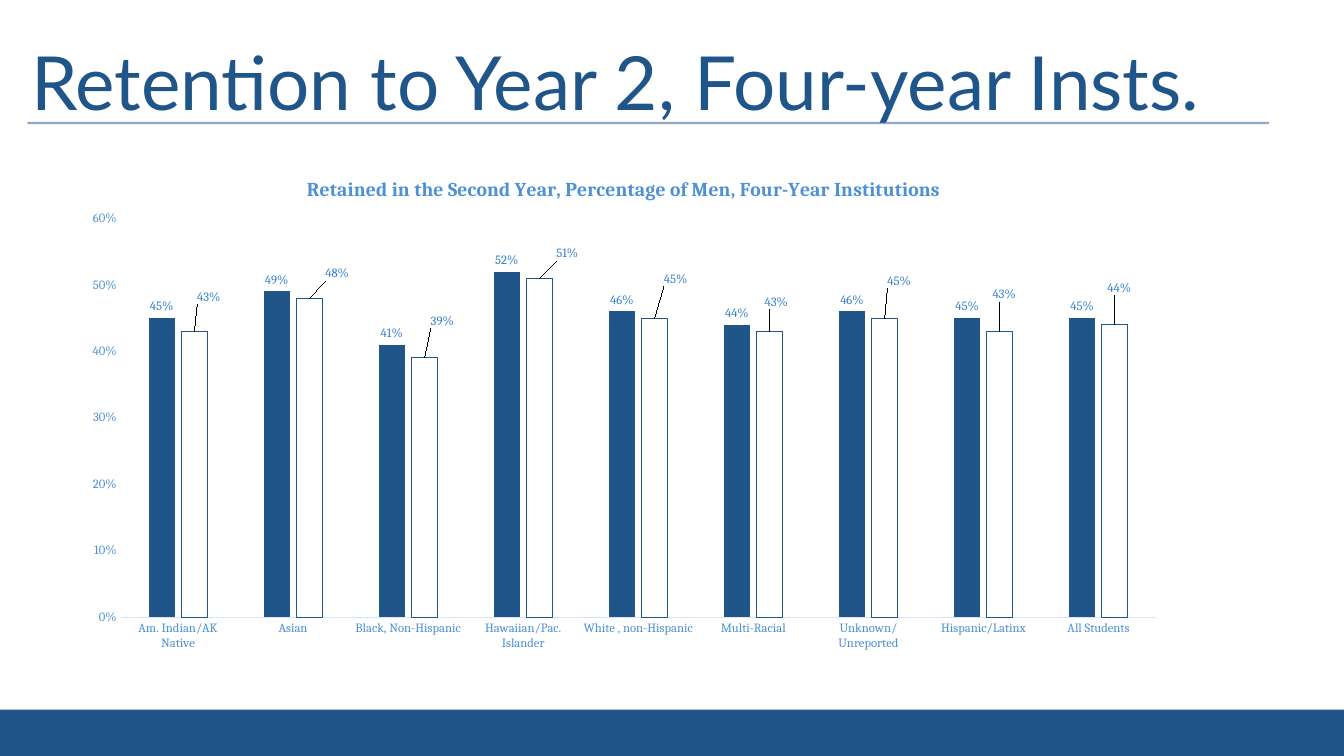
from lxml import etree
from pptx import Presentation
from pptx.chart.data import CategoryChartData
from pptx.dml.color import RGBColor
from pptx.enum import chart as ch, shapes, text
from pptx.oxml import ns
from pptx.util import Cm, Pt

HEADING = "Retention to Year 2, Four-year Insts."
CHART_TITLE = "Retained in the Second Year, Percentage of Men, Four-Year Institutions"
RETENTION = [
    ("Am. Indian/AK Native", 0.45, 0.43),
    ("Asian", 0.49, 0.48),
    ("Black, Non-Hispanic", 0.41, 0.39),
    ("Hawaiian/Pac. Islander", 0.52, 0.51),
    ("White , non-Hispanic", 0.46, 0.45),
    ("Multi-Racial", 0.44, 0.43),
    ("Unknown/ Unreported", 0.46, 0.45),
    ("Hispanic/Latinx", 0.45, 0.43),
    ("All Students", 0.45, 0.44),
]
LABEL_SHIFTS = [
    (0.013, -0.045), (0.025, -0.026), (0.016, -0.05),
    (0.025, -0.026), (0.019, -0.055), (0.006, -0.035),
    (0.013, -0.05), (0.004, -0.05), (0.004, -0.05),
]
THEME = {
    "navy": RGBColor.from_string("20558A"),
    "axis": RGBColor.from_string("4C90D5"),
    "label": RGBColor.from_string("307FCF"),
    "baseline": RGBColor.from_string("D6E5F5"),
    "heading_font": "Lato",
    "chart_font": "Cambria",
    "heading": Pt(53.3),
    "chart_title": Pt(14),
    "chart": Pt(10),
    "small": Pt(9),
}


def style(font, size, color, face="chart_font", bold=False):
    font.name = THEME[face]
    font.size = THEME[size]
    font.color.rgb = THEME[color]
    font.bold = bold


def manual_layout(**values):
    layout = etree.Element(ns.qn("c:layout"))
    manual = etree.SubElement(layout, ns.qn("c:manualLayout"))
    for tag, value in values.items():
        etree.SubElement(manual, ns.qn(f"c:{tag}")).set("val", str(value))
    return layout


def add_frame(slide, width, height):
    band_height = Cm(1.17)
    band = slide.shapes.add_shape(
        shapes.MSO_SHAPE.RECTANGLE, 0, height - band_height, width, band_height)
    band.shadow.inherit = False
    band.fill.solid()
    band.fill.fore_color.rgb = THEME["navy"]
    band.line.fill.background()

    rule = slide.shapes.add_connector(
        shapes.MSO_CONNECTOR.STRAIGHT, Cm(0.69), Cm(3.1), Cm(31.98), Cm(3.1))
    rule.line.color.rgb = THEME["navy"]
    rule.line.width = Pt(1.5)
    color = rule.line._get_or_add_ln().find(".//" + ns.qn("a:srgbClr"))
    etree.SubElement(color, ns.qn("a:alpha")).set("val", "50000")
    etree.SubElement(rule._element.spPr, ns.qn("a:effectLst"))


def add_heading(slide):
    heading = slide.shapes.title
    heading.left, heading.top = Cm(0.53), Cm(0.79)
    heading.width, heading.height = Cm(30.71), Cm(2.26)
    frame = heading.text_frame
    frame.auto_size = text.MSO_AUTO_SIZE.NONE
    frame.vertical_anchor = text.MSO_ANCHOR.TOP
    frame.paragraphs[0].alignment = text.PP_ALIGN.LEFT
    run = frame.paragraphs[0].add_run()
    run.text = HEADING
    style(run.font, "heading", "navy", "heading_font")


def add_retention_chart(slide):
    names, first, second = zip(*RETENTION)
    data = CategoryChartData(number_format="0%")
    data.categories = names
    data.add_series("Series 1", first)
    data.add_series("Series 2", second)
    chart = slide.shapes.add_chart(
        ch.XL_CHART_TYPE.COLUMN_CLUSTERED,
        Cm(1.78), Cm(3.84), Cm(27.94), Cm(12.8), data).chart
    style(chart.font, "chart", "navy")
    chart.has_legend = False

    chart.has_title = True
    run = chart.chart_title.text_frame.paragraphs[0].add_run()
    run.text = CHART_TITLE
    style(run.font, "chart_title", "axis", bold=True)
    title = chart.chart_title._element
    for old in title.findall(ns.qn("c:layout")):
        title.remove(old)
    title.find(ns.qn("c:tx")).addnext(
        manual_layout(xMode="edge", yMode="edge", x=0.21, y=0.04))

    plot_area = chart._chartSpace.find(".//" + ns.qn("c:plotArea"))
    for old in plot_area.findall(ns.qn("c:layout")):
        plot_area.remove(old)
    plot_area.insert(0, manual_layout(
        layoutTarget="inner", xMode="edge", yMode="edge",
        x=0.045, y=0.13, w=0.934, h=0.785))

    for axis in (chart.category_axis, chart.value_axis):
        axis.has_major_gridlines = False
        axis.major_tick_mark = axis.minor_tick_mark = ch.XL_TICK_MARK.NONE
        style(axis.tick_labels.font, "small", "axis")
    chart.category_axis.format.line.color.rgb = THEME["baseline"]
    chart.category_axis.format.line.width = Pt(0.75)
    scale = chart.value_axis
    scale.format.line.fill.background()
    scale.minimum_scale, scale.maximum_scale, scale.major_unit = 0, 0.6, 0.1
    scale.tick_labels.number_format = "0%"
    scale.tick_labels.number_format_is_linked = False

    plot = chart.plots[0]
    plot.gap_width, plot.overlap = 219, -27
    plot.vary_by_categories = False
    solid, outlined = plot.series
    solid.format.fill.solid()
    solid.format.fill.fore_color.rgb = THEME["navy"]
    outlined.format.fill.background()
    outlined.format.line.color.rgb = THEME["navy"]
    outlined.format.line.width = Pt(0.75)
    for series in (solid, outlined):
        labels = series.data_labels
        labels.show_value = True
        labels.number_format = "0%"
        labels.number_format_is_linked = False
        labels.position = ch.XL_LABEL_POSITION.OUTSIDE_END
        style(labels.font, "small", "label")

    for index in range(len(RETENTION)):
        label = outlined.points[index].data_label
        style(label.font, "small", "label")
        label.position = ch.XL_LABEL_POSITION.OUTSIDE_END
    shifted = outlined._element.findall(".//" + ns.qn("c:dLbl"))
    for label, (x, y) in zip(shifted, LABEL_SHIFTS):
        label.insert(1, manual_layout(x=x, y=y))


def main():
    deck = Presentation()
    deck.slide_width, deck.slide_height = Cm(33.87), Cm(19.05)
    slide = deck.slides.add_slide(deck.slide_layouts[5])
    add_frame(slide, deck.slide_width, deck.slide_height)
    add_heading(slide)
    add_retention_chart(slide)
    deck.save("out.pptx")


if __name__ == "__main__":
    main()
